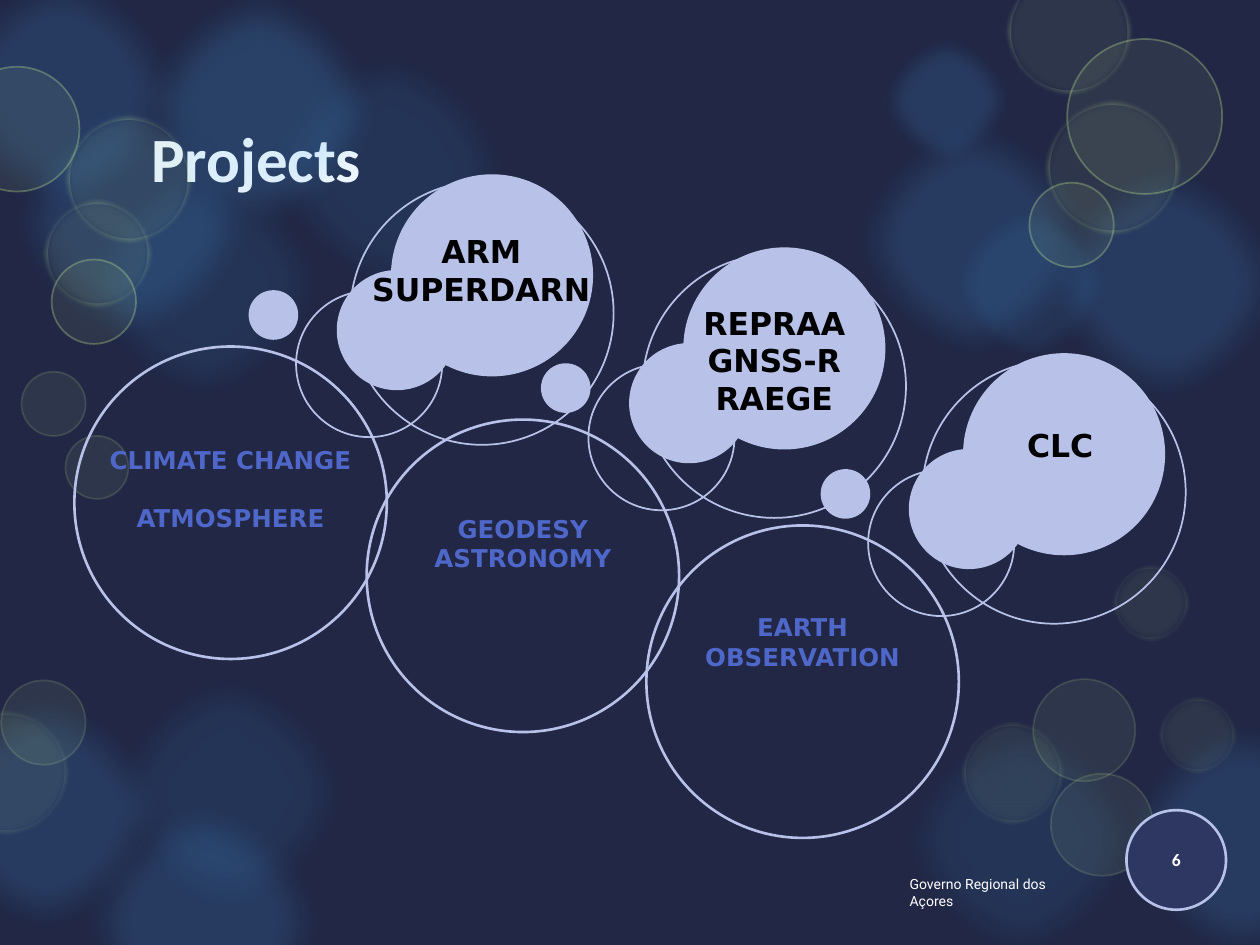
from lxml import etree
from pptx import Presentation
from pptx.dml.color import RGBColor
from pptx.enum.shapes import MSO_SHAPE
from pptx.enum.text import MSO_ANCHOR, PP_ALIGN
from pptx.oxml.ns import qn
from pptx.util import Cm, Pt

OVAL = MSO_SHAPE.OVAL
MIDDLE = MSO_ANCHOR.MIDDLE
LEFT, CENTER = PP_ALIGN.LEFT, PP_ALIGN.CENTER

NAVY = RGBColor(0x21, 0x27, 0x45)
BADGE = RGBColor(0x2E, 0x37, 0x61)
LILAC = RGBColor(0xB8, 0xC2, 0xE9)
INDIGO = RGBColor(0x4E, 0x67, 0xC8)
SKY = RGBColor(0x4F, 0xAD, 0xF3)
LIME = RGBColor(0xCA, 0xF2, 0x97)
WHITE = RGBColor(0xFF, 0xFF, 0xFF)
BLACK = RGBColor(0, 0, 0)


def cm(inches):
    return Cm(inches * 2.54)


def circle(x, y, d, fill=None, line=None, width=1, fill_alpha=100,
           line_alpha=100, soft=0):
    sp = slide.shapes.add_shape(OVAL, cm(x), cm(y), cm(d), cm(d))
    sp.shadow.inherit = False
    for part, color in ((sp.fill, fill), (sp.line.fill, line)):
        if color is None:
            part.background()
        else:
            part.solid()
            part.fore_color.rgb = color
    if line is not None:
        sp.line.width = Pt(width)
    props = sp._element.spPr
    for parent, alpha in ((props, fill_alpha), (props.find(qn("a:ln")), line_alpha)):
        clr = parent.find(qn("a:solidFill") + "/" + qn("a:srgbClr"))
        if clr is not None and alpha < 100:
            etree.SubElement(clr, qn("a:alpha"), val=str(alpha * 1000))
    if soft:
        etree.SubElement(props.find(qn("a:effectLst")), qn("a:softEdge"),
                         rad=str(Pt(soft)))
    return sp


prs = Presentation()
prs.slide_width, prs.slide_height = cm(10), cm(7.5)
slide = prs.slides.add_slide(prs.slide_layouts[5])
slide.background.fill.solid()
slide.background.fill.fore_color.rgb = NAVY

# Blurred glows: opacity, diameter, soft edge, top-left corners
GLOWS = [
    (10, 2.09, 18, [(0.57, 1.2), (2.05, 0.31), (0.77, 5.24), (7.06, 5.62)]),
    (16, 2.09, 18, [(0.57, 6.27), (8.81, 5.62), (-0.69, 5.41), (-0.56, -0.32),
                    (0, 0.72), (8.2, 1.2), (6.69, 0.86)]),
    (20, 2.09, 18, [(1.01, -0.18)]),
    (10, 1.33, 10, [(7.52, 1.59)]),
    (16, 1.14, 10, [(6.94, 0.23)]),
]
for alpha, d, soft, corners in GLOWS:
    for x, y in corners:
        circle(x, y, d, SKY, fill_alpha=alpha, soft=soft)

# Bokeh rings: line width, line opacity, soft edge, circles
RINGS = [
    (5, 15, 4, [(-0.44, 5.64, 0.98), (7.63, 5.73, 0.81), (8.83, 4.48, 0.61),
                (9.2, 5.53, 0.61)]),
    (5, 30, 4, [(0.52, 0.92, 1), (0.35, 1.59, 0.85), (7.99, -0.24, 0.99),
                (8.3, 0.8, 1.06)]),
    (1, 15, 0, [(0.01, 5.4, 0.67), (8.34, 6.14, 0.81), (8.2, 5.39, 0.81),
                (0.17, 2.95, 0.51), (0.52, 3.46, 0.5)]),
    (1, 30, 0, [(-0.36, 0.53, 0.99), (0.41, 2.06, 0.67), (8.47, 0.31, 1.23),
                (8.17, 1.45, 0.67)]),
]
for width, alpha, soft, rings in RINGS:
    for x, y, d in rings:
        circle(x, y, d, LIME, LIME, width, 8, alpha, soft)

# Title
title = slide.shapes.title
title.left, title.top, title.width, title.height = cm(1.1), cm(0.74), cm(7.79), cm(1.01)
tf = title.text_frame
tf.text = "Projects"
tf.vertical_anchor = MIDDLE
p = tf.paragraphs[0]
p.alignment = LEFT
font = p.runs[0].font
font.name, font.size, font.bold = "Calibri", Pt(36), True
font.color.rgb = WHITE

# Footer
tf = slide.shapes.add_textbox(cm(7.12), cm(6.9), cm(1.65), cm(0.24)).text_frame
tf.word_wrap = True
tf.text = "Governo Regional dos Açores"
font = tf.paragraphs[0].runs[0].font
font.name, font.size = "Roboto", Pt(8)
font.color.rgb = WHITE

# Slide number badge
tf = circle(8.94, 6.43, 0.79, BADGE, LILAC, 1.5).text_frame
tf.text = "6"
tf.vertical_anchor = MIDDLE
p = tf.paragraphs[0]
p.alignment = CENTER
font = p.runs[0].font
font.name, font.size, font.bold = "Calibri", Pt(10), True
font.color.rgb = WHITE

# Project clusters: main circle corner, theme lines, theme box, gap between
# theme lines in points, project lines, project box
CLUSTERS = [
    (0.59, 2.75, "CLIMATE CHANGE\nATMOSPHERE", (0.63, 3.48, 2.4, 1.04), 16.5,
     "ARM\nSUPERDARN", (2.84, 1.79, 1.96, 0.71)),
    (2.91, 3.33, "GEODESY\nASTRONOMY", (2.95, 4.03, 2.4, 0.81), 0,
     "REPRAA\nGNSS-R\nRAEGE", (5.47, 2.36, 1.35, 1.01)),
    (5.13, 4.17, "EARTH OBSERVATION", (5.17, 4.81, 2.4, 0.81), 0,
     "CLC", (8.05, 3.33, 0.73, 0.4)),
]
# Satellite circles relative to the main circle: dx, dy, diameter, fill
SATELLITES = [
    (2.19, -1.31, 2.09, None), (2.52, -1.36, 1.59, LILAC),
    (1.76, -0.44, 1.16, None), (2.09, -0.6, 0.94, LILAC),
    (1.39, -0.44, 0.38, LILAC),
]
for x, y, theme, theme_box, gap, projects, projects_box in CLUSTERS:
    circle(x, y, 2.48, None, LILAC, 1.5)
    for dx, dy, d, fill in SATELLITES:
        circle(x + dx, y + dy, d, fill, LILAC)
    for text, box, size, color, wrap, space in (
            (theme, theme_box, 14, INDIGO, True, gap),
            (projects, projects_box, 18, BLACK, False, 0)):
        tf = slide.shapes.add_textbox(*map(cm, box)).text_frame
        tf.word_wrap = wrap
        tf.text = text
        for i, p in enumerate(tf.paragraphs):
            p.alignment = CENTER
            if i and space:
                p.space_before = Pt(space)
            font = p.runs[0].font
            font.name, font.size, font.bold = "DejaVu Sans", Pt(size), True
            font.color.rgb = color

prs.save("out.pptx")
